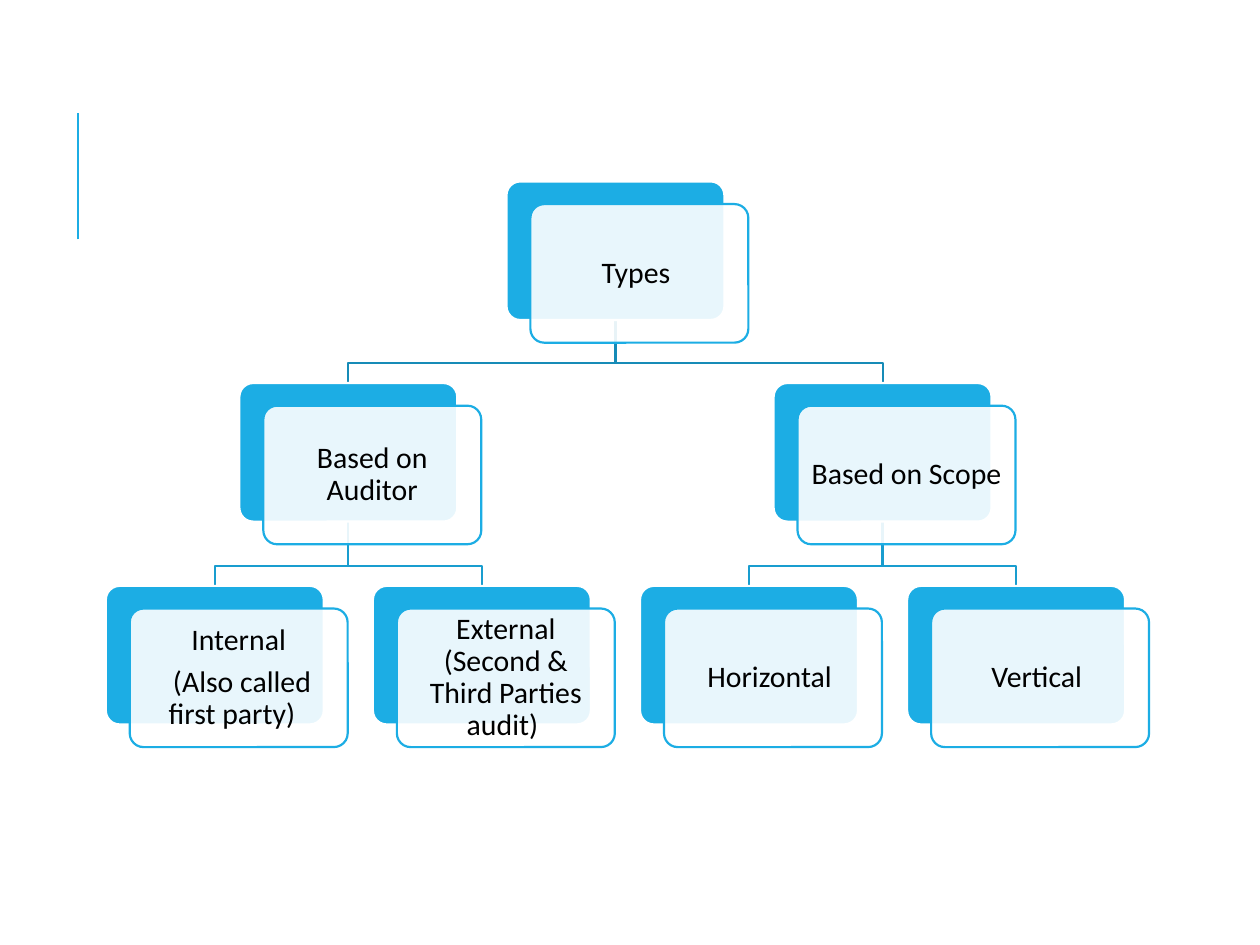
"""Builds a slide with a tree of audit types."""
from lxml.etree import SubElement
from pptx import Presentation
from pptx.dml.color import RGBColor as Rgb
from pptx.enum.shapes import MSO_CONNECTOR as Link, MSO_SHAPE as Kind
from pptx.enum.text import MSO_ANCHOR as Anchor, PP_ALIGN as Align
from pptx.oxml.ns import qn
from pptx.util import Inches, Pt

BLUE, WHITE, BLACK = "1CADE4", "FFFFFF", "000000"
NODES = {
    "types": (0, 1.5, ["Types "]),
    "auditor": (1, 0.5, ["Based on Auditor"]),
    "internal": (2, 0, ["Internal", " (Also called first party)  "]),
    "external": (2, 1, ["External (Second & Third Parties audit) "]),
    "scope": (1, 2.5, ["Based on Scope "]),
    "horizontal": (2, 2, ["Horizontal "]),
    "vertical": (2, 3, ["Vertical "]),
}
EDGES = [
    ("scope", "vertical"), ("scope", "horizontal"), ("types", "scope"),
    ("auditor", "external"), ("auditor", "internal"), ("types", "auditor"),
]
EDGE_HUES = ["168BB7", "199DCF"]
TOPS = [1.44, 3.04, 4.65]
LEFT, PITCH = 0.84, 2.12
WIDTH, HEIGHT = 1.73, 1.1
SHIFT_X, SHIFT_Y = 0.19, 0.18
BEND = 0.16


def paint(form, hue):
    form.solid()
    form.fore_color.rgb = Rgb.from_string(hue)


def stroke(line, hue, size=1.25):
    paint(line.fill, hue)
    line.width = Pt(size)


def place(name):
    row, col, _ = NODES[name]
    return LEFT + PITCH * col, TOPS[row]


def add_edge(shapes, parent, child):
    (px, py), (cx, cy) = place(parent), place(child)
    px, cx = px + WIDTH / 2, cx + WIDTH / 2
    points = [(px, py + HEIGHT), (px, cy - BEND), (cx, cy - BEND), (cx, cy)]
    first, *rest = [(Inches(x), Inches(y)) for x, y in points]
    pen = shapes.build_freeform(*first)
    pen.add_line_segments(rest, close=False)
    edge = pen.convert_to_shape()
    edge.shadow.inherit = False
    edge.fill.background()
    stroke(edge.line, EDGE_HUES[NODES[parent][0]])


def add_card(shapes, x, y, fill, line):
    card = shapes.add_shape(Kind.ROUNDED_RECTANGLE, Inches(x), Inches(y),
                            Inches(WIDTH), Inches(HEIGHT))
    card.adjustments[0] = 0.1
    card.shadow.inherit = False
    paint(card.fill, fill)
    stroke(card.line, line)
    return card


def add_text(card, lines):
    frame = card.text_frame
    frame.word_wrap = True
    frame.vertical_anchor = Anchor.MIDDLE
    frame.margin_left = frame.margin_right = Inches(0.07)
    frame.margin_top = frame.margin_bottom = Inches(0.07)
    for i, line in enumerate(lines):
        para = frame.add_paragraph() if i else frame.paragraphs[0]
        para.alignment = Align.CENTER
        para.line_spacing = 0.9
        para.space_after = Pt(6)
        run = para.add_run()
        run.text = line
        run.font.name = "Calibri"
        run.font.size = Pt(17)
        run.font.color.rgb = Rgb.from_string(BLACK)


def add_node(shapes, name):
    x, y = place(name)
    add_card(shapes, x, y, BLUE, WHITE)
    front = add_card(shapes, x + SHIFT_X, y + SHIFT_Y, WHITE, BLUE)
    color = front.fill._xPr.find(qn("a:solidFill"))[0]
    SubElement(color, qn("a:alpha"), val="90000")
    add_text(front, NODES[name][2])


def main():
    deck = Presentation()
    deck.slide_width, deck.slide_height = Inches(10), Inches(7.5)
    shapes = deck.slides.add_slide(deck.slide_layouts[6]).shapes
    rule = shapes.add_connector(Link.STRAIGHT, Inches(0.62), Inches(1.9),
                                Inches(0.62), Inches(0.9))
    stroke(rule.line, BLUE, 1.5)
    SubElement(rule._element.spPr, qn("a:effectLst"))
    for parent, child in EDGES:
        add_edge(shapes, parent, child)
    for name in NODES:
        add_node(shapes, name)
    deck.save("out.pptx")


if __name__ == "__main__":
    main()
